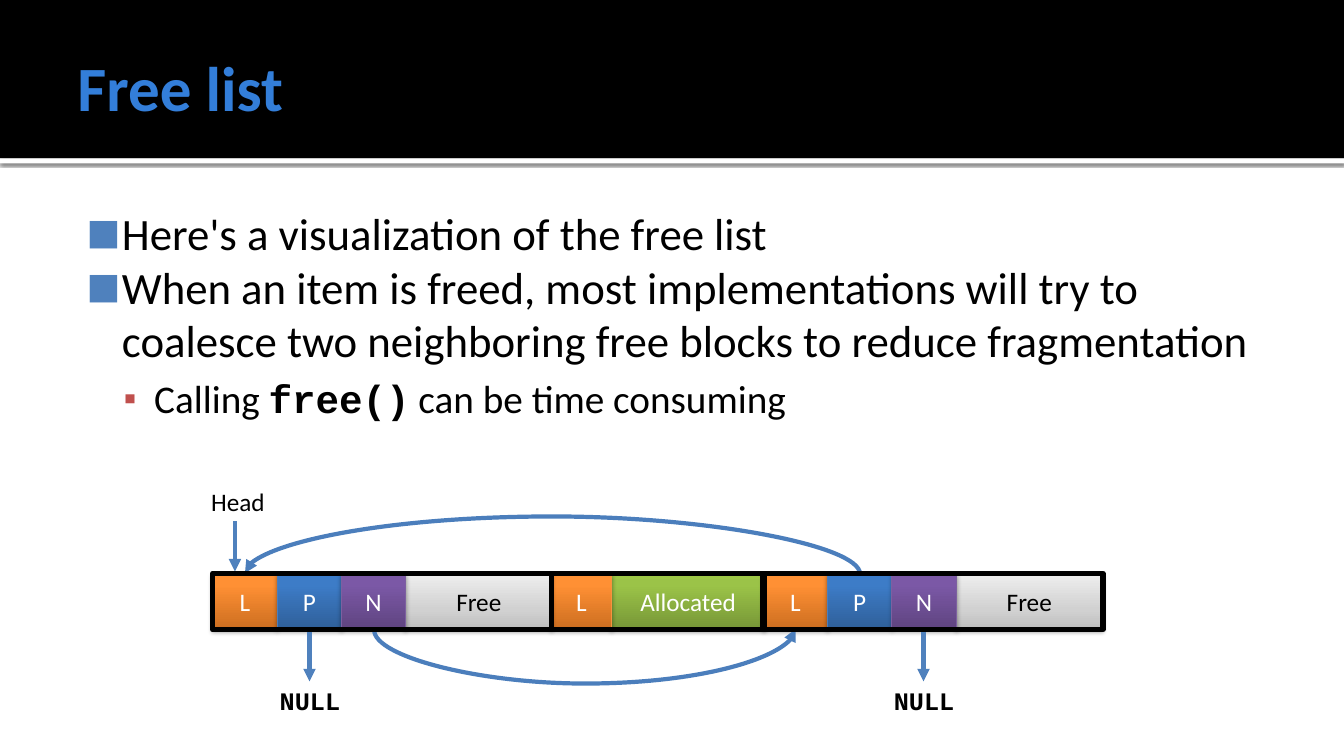
import itertools

import pptx
import pptx.dml.color
import pptx.enum.shapes
import pptx.enum.text
import pptx.oxml
import pptx.oxml.ns
import pptx.util
from lxml import etree

COLORS = {"black": "000000", "white": "FFFFFF", "title": "337ED9",
          "bullet": "4F81BD", "sub": "C0504D", "arrow": "4F81BD", "curve": "4B7EBC"}

# Cell label: gradient stops (position, colour), line colour, text colour
CELLS = {
    "L": ([(0, "CC6E20"), (80, "FF9034"), (100, "FF9136")], "F69240", "white"),
    "P": ([(0, "2F5F99"), (80, "3D7CC7"), (100, "3A7CCB")], "4B7EBC", "white"),
    "N": ([(0, "5F4480"), (80, "7B58A6"), (100, "7C57A8")], "7D60A0", "white"),
    "Free": ([(0, "BDBDBD"), (35, "D1D1D1"), (100, "EEEEEE")], "000000", "black"),
    "Allocated": ([(0, "779737"), (80, "9BC348"), (100, "9DC746")], "98B955", "white"),
}

STEP = 0.1  # inches per grid column and row
RECT = pptx.enum.shapes.MSO_SHAPE.RECTANGLE
LINE = pptx.enum.shapes.MSO_CONNECTOR
ANCHOR = pptx.enum.text.MSO_ANCHOR
CENTER = pptx.enum.text.PP_ALIGN.CENTER
qn = pptx.oxml.ns.qn


def rgb(color):
    return pptx.dml.color.RGBColor.from_string(COLORS.get(color, color))


def grid(*cells):
    return [pptx.util.Inches(c * STEP) for c in cells]


def add_xml(parent, tag, **attrs):
    return etree.SubElement(parent, qn(tag), {k: str(v) for k, v in attrs.items()})


def add_text(p, text, size=18, font="Calibri", color="black", bold=False):
    r = p.add_run()
    r.text = text
    r.font.size = pptx.util.Pt(size)
    r.font.name = font
    r.font.bold = bold
    r.font.color.rgb = rgb(color)


class Deck:
    def __init__(self):
        self.prs = pptx.Presentation()
        self.prs.slide_width = pptx.util.Inches(13.33)
        self.prs.slide_height = pptx.util.Inches(7.5)
        self.s = self.prs.slides.add_slide(self.prs.slide_layouts[6])

    def box(self, x, y, w, h, fill=None, line=None, width=0.75, shadow=None):
        """Rectangle; shadow is (opacity %, blur pt, distance pt)."""
        sp = self.s.shapes.add_shape(RECT, *grid(x, y, w, h))
        sp.shadow.inherit = False
        if fill:
            sp.fill.solid()
            sp.fill.fore_color.rgb = rgb(fill)
        else:
            sp.fill.background()
        if line:
            sp.line.color.rgb = rgb(line)
            sp.line.width = pptx.util.Pt(width)
        else:
            sp.line.fill.background()
        if shadow:
            alpha, blur, dist = shadow
            effects = sp._element.spPr.find(qn("a:effectLst"))
            outer = add_xml(effects, "a:outerShdw", blurRad=pptx.util.Pt(blur),
                            dist=pptx.util.Pt(dist), dir=90 * 60000, rotWithShape=0)
            color = add_xml(outer, "a:srgbClr", val=COLORS["black"])
            add_xml(color, "a:alpha", val=alpha * 1000)
        return sp

    def cell(self, x, y, w, h, label):
        """Memory cell with a gradient running from bottom to top."""
        stops, line, color = CELLS[label]
        sp = self.box(x, y, w, h, stops[0][1], line, shadow=(35, 3.1, 1.8))
        sp.fill.gradient()
        grad = sp._element.spPr.find(qn("a:gradFill"))
        for child in list(grad):
            grad.remove(child)
        stop_list = add_xml(grad, "a:gsLst")
        for pos, stop in stops:
            add_xml(add_xml(stop_list, "a:gs", pos=pos * 1000), "a:srgbClr", val=stop)
        add_xml(grad, "a:lin", ang=270 * 60000, scaled=0)
        tf = sp.text_frame
        tf.vertical_anchor = ANCHOR.MIDDLE
        tf.paragraphs[0].alignment = CENTER
        add_text(tf.paragraphs[0], label, color=color)

    def text_box(self, x, y, w, h, insets=(1, 0.5, 1, 0.5), anchor=ANCHOR.TOP):
        tf = self.s.shapes.add_textbox(*grid(x, y, w, h)).text_frame
        tf.word_wrap = True
        tf.vertical_anchor = anchor
        tf.margin_left, tf.margin_top, tf.margin_right, tf.margin_bottom = grid(*insets)
        return tf

    def label(self, x, y, w, text, **style):
        tf = self.text_box(x, y, w, 4)
        tf.auto_size = pptx.enum.text.MSO_AUTO_SIZE.SHAPE_TO_FIT_TEXT
        tf.paragraphs[0].alignment = CENTER
        add_text(tf.paragraphs[0], text, **style)

    def bullet(self, p, indent, hang, char, color, size):
        pPr = p._p.get_or_add_pPr()
        left, first = grid(indent, -hang)
        pPr.set("marL", str(left))
        pPr.set("indent", str(first))
        add_xml(add_xml(pPr, "a:buClr"), "a:srgbClr", val=COLORS[color])
        add_xml(pPr, "a:buSzPct", val=size * 1000)
        add_xml(pPr, "a:buFont", typeface="Calibri")
        add_xml(pPr, "a:buChar", char=char)

    def arrow(self, x1, y1, x2, y2, color="arrow", kind=LINE.STRAIGHT):
        c = self.s.shapes.add_connector(kind, *grid(x1, y1, x2, y2))
        c.line.color.rgb = rgb(color)
        c.line.width = pptx.util.Pt(3)
        spPr = c._element.spPr
        add_xml(spPr.find(qn("a:ln")), "a:tailEnd", type="triangle")
        add_xml(spPr, "a:effectLst")
        return c

    def curve(self, x1, x2, y, bulge, turn, adjust, **flips):
        """Curved arrow between two points of one row, bulging by some rows."""
        span, thin = abs(x2 - x1), 0.1
        mid = (x1 + x2) / 2
        c = self.arrow(mid - thin / 2, y - span / 2, mid + thin / 2, y + span / 2,
                       "curve", LINE.CURVE)
        spPr = c._element.spPr
        xfrm = spPr.find(qn("a:xfrm"))
        xfrm.set("rot", str(turn * 60000))
        for name, value in flips.items():
            xfrm.set(name, str(value))
        guides = spPr.find(qn("a:prstGeom")).find(qn("a:avLst"))
        add_xml(guides, "a:gd", name="adj1",
                fmla=f"val {round(adjust * bulge / thin * 100000)}")


def main():
    d = Deck()

    # Header band and title
    d.box(0, 15.7, 133.3, 0.5, "white", shadow=(60, 2.5, 0.8))
    d.box(0, 0, 133.3, 15.7, "black")
    tf = d.text_box(6.7, 1.7, 120, 13.7, (1, 0.5, 0.5, 0.5), ANCHOR.MIDDLE)
    add_text(tf.paragraphs[0], "Free list", size=45, color="title", bold=True)

    # Bulleted text
    tf = d.text_box(6.7, 19.4, 120, 50.6, (0.6, 1, 1, 0.5))
    first, second, third = tf.paragraphs[0], tf.add_paragraph(), tf.add_paragraph()
    for p, text in (
            (first, "Here's a visualization of the free list"),
            (second, "When an item is freed, most implementations will try to "
                     "coalesce two neighboring free blocks to reduce fragmentation")):
        d.bullet(p, 4.8, 3.5, "■", "bullet", 80)
        add_text(p, text, size=32)
    third.level = 1
    third.space_before = pptx.util.Pt(5.6)
    d.bullet(third, 8, 3, "▪", "sub", 90)
    add_text(third, "Calling ", size=28)
    add_text(third, "free()", size=28, font="Courier New", bold=True)
    add_text(third, " can be time consuming", size=28)

    # Memory cells, block by block
    top, height = 56.9, 5.55
    free = [("L", 6.38), ("P", 6.38), ("N", 6.38), ("Free", 14.5)]
    used = [("L", 5.95), ("Allocated", 15.2)]
    for left, block in ((54.7, used), (21.1, free), (75.7, free)):
        lefts = itertools.accumulate((w for _, w in block), initial=left)
        cells = list(zip(lefts, block))
        for x, (name, w) in cells[-1:] + cells[:-1]:
            d.cell(x, top, w, height, name)

    # Pointers
    d.label(18.1, 47.8, 11, "Head")
    d.arrow(23.3, 51.7, 23.3, 56.7)
    d.curve(85.3, 24.3, top, 5.8, 270, 1, flipV=1)
    d.curve(37.1, 78.9, 62.45, 5.4, 90, -1, flipH=1, flipV=1)
    for x in (30.7, 91.6):
        d.arrow(x, 62.6, x, 67.6)
        d.label(x - 4.1, 67.5, 8.3, "NULL", font="Courier New", bold=True)

    # Block frames
    for x, w in ((21.1, 33.6), (54.7, 21), (75.8, 33.6)):
        d.box(x, top, w, height, line="black", width=4)

    d.prs.save("out.pptx")


if __name__ == "__main__":
    main()
